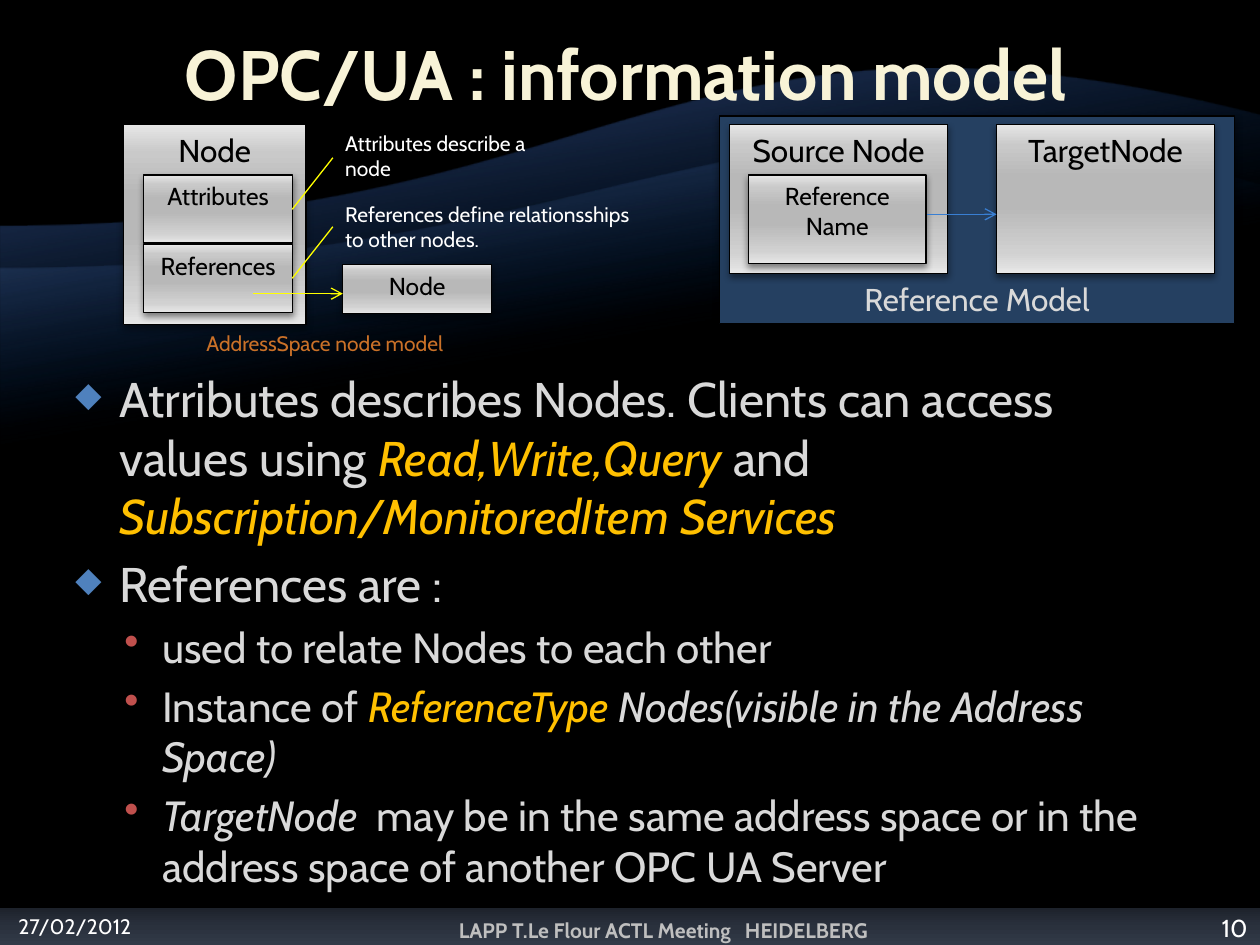
from lxml.etree import SubElement
from pptx import Presentation
from pptx.dml.color import RGBColor
from pptx.enum.shapes import MSO_CONNECTOR, MSO_SHAPE
from pptx.enum.text import MSO_ANCHOR as ANCHOR, PP_ALIGN as ALIGN
from pptx.oxml.ns import qn
from pptx.util import Cm, Pt

FONT = "Cabin"
COLOURS = {
    "black": "000000", "white": "FFFFFF", "grey": "D9D9D9", "footer": "BFBFBF",
    "cream": "F8F3D7", "gold": "FFC000", "orange": "CA7128", "panel": "254061",
    "yellow": "FFFF00", "blue": "397FD3", "diamond": "4F81BD", "dot": "C0504D",
}
COLOURS = {name: RGBColor.from_string(value) for name, value in COLOURS.items()}
STEEL = [(0, "E7E7E7", 100), (14, "D1D1D1", 100), (45, "B8B8B8", 100),
         (65, "B8B8B8", 100), (86, "C9C9C9", 100), (100, "E7E7E7", 100)]


def fill_gradient(shape, stops, angle):
    """Fill with (position, colour, opacity) stops, angle clockwise."""
    shape.fill.gradient()
    shape.fill.gradient_angle = 360 - angle
    stop_list = shape._element.spPr.find(qn("a:gradFill")).find(qn("a:gsLst"))
    for old in list(stop_list):
        stop_list.remove(old)
    for position, colour, opacity in stops:
        stop = SubElement(stop_list, qn("a:gs"), pos=str(position * 1000))
        value = SubElement(stop, qn("a:srgbClr"), val=colour)
        if opacity < 100:
            SubElement(value, qn("a:alpha"), val=str(opacity * 1000))


def write(frame, text, size, colour, align, anchor, bold=False):
    frame.word_wrap = True
    frame.vertical_anchor = anchor
    frame.text = text
    for para in frame.paragraphs:
        para.alignment = align
        for span in para.runs:
            span.font.name = FONT
            span.font.size = Pt(size)
            span.font.bold = bold
            span.font.color.rgb = COLOURS[colour]


deck = Presentation()
deck.slide_width, deck.slide_height = Cm(25.4), Cm(19.05)
page = deck.slides.add_slide(deck.slide_layouts[6])
page.background.fill.solid()
page.background.fill.fore_color.rgb = COLOURS["black"]

# Footer band
band = page.shapes.add_shape(MSO_SHAPE.RECTANGLE, Cm(-0.71), Cm(18.31), Cm(26.8), Cm(0.74))
band.shadow.inherit = False
band.line.fill.background()
fill_gradient(band, [(0, "1D222B", 100), (50, "2A313D", 100), (100, "323A48", 100)], 90)

# Background waves: Bezier control points, bottom edge, bright colour, its opacity
waves = [
    ([(0, 4.57), (12.7, 4.57), (13.56, -0.71), (25.4, 2.34)], 17.78, "7C9FFF", 55),
    ([(0, 5.41), (12.7, 5.41), (15.19, 0.79), (25.4, 3.73)], 16.18, "A5BDFF", 30),
]
STEPS = 60
for controls, bottom, colour, opacity in waves:
    curve = []
    for step in range(STEPS + 1):
        t = step / STEPS
        weights = [(1 - t) ** 3, 3 * t * (1 - t) ** 2, 3 * t ** 2 * (1 - t), t ** 3]
        curve.append(tuple(Cm(sum(w * point[axis] for w, point in zip(weights, controls)))
                           for axis in (0, 1)))
    builder = page.shapes.build_freeform(Cm(0), Cm(bottom))
    builder.add_line_segments(curve + [(Cm(25.4), Cm(bottom))], close=True)
    wave = builder.convert_to_shape()
    wave.shadow.inherit = False
    wave.line.fill.background()
    fill_gradient(wave, [(65, "00469C", 0), (100, colour, opacity)], 260)

# Diagram boxes, back to front: place, text, size
boxes = [
    ((14.5, 2.34, 10.39, 4.19), "Reference Model", 18),
    ((2.49, 2.51, 3.68, 4.04), "Node", 18),
    ((2.9, 3.53, 3, 1.37), "Attributes", 14),
    ((2.9, 4.93, 3, 1.37), "References", 14),
    ((6.91, 5.33, 3, 0.99), "Node", 14),
    ((14.71, 2.51, 4.39, 3), "Source Node", 18),
    ((15.09, 3.53, 3.58, 1.78), "Reference Name", 14),
    ((20.09, 2.51, 4.39, 3), "TargetNode", 18),
]
for place, text, size in boxes:
    box = page.shapes.add_shape(MSO_SHAPE.RECTANGLE, *map(Cm, place))
    box.line.color.rgb = COLOURS["black"]
    box.line.width = Pt(0.75)
    if text == "Reference Model":
        box.fill.solid()
        box.fill.fore_color.rgb = COLOURS["panel"]
        write(box.text_frame, text, size, "grey", ALIGN.CENTER, ANCHOR.BOTTOM)
    else:
        fill_gradient(box, STEEL, 270)
        write(box.text_frame, text, size, "black", ALIGN.CENTER, ANCHOR.TOP)
    box.shadow.inherit = False
    effects = box._element.spPr.find(qn("a:effectLst"))
    shadow = SubElement(effects, qn("a:outerShdw"), blurRad=str(Pt(4)), dist=str(Pt(2)),
                        dir="5400000", rotWithShape="0")
    tint = SubElement(shadow, qn("a:srgbClr"), val="000000")
    SubElement(tint, qn("a:alpha"), val="43000")

# Connectors: ends, colour, arrowhead
connectors = [
    ((5.11, 5.92, 6.91, 5.92), "yellow", True),
    ((5.89, 4.22, 6.71, 3.18), "yellow", False),
    ((5.89, 5.61, 6.71, 4.57), "yellow", False),
    ((18.69, 4.32, 20.09, 4.32), "blue", True),
]
for ends, colour, arrow in connectors:
    link = page.shapes.add_connector(MSO_CONNECTOR.STRAIGHT, *map(Cm, ends))
    link.line.color.rgb = COLOURS[colour]
    link.line.width = Pt(0.75)
    if arrow:
        SubElement(link.line._get_or_add_ln(), qn("a:tailEnd"), type="arrow")
    SubElement(link._element.spPr, qn("a:effectLst"))

# Title, labels and footer: place, text, size, colour, align, anchor, bold, side insets
labels = [
    ((3.51, 0.2, 18.21, 2.13), "OPC/UA : information model", 40, "cream",
     ALIGN.CENTER, ANCHOR.BOTTOM, True, (0, 0)),
    ((6.71, 2.51, 4.32, 1.27), "Attributes describe a node", 12, "white",
     ALIGN.LEFT, ANCHOR.TOP, False, (0.25, 0.25)),
    ((6.71, 3.94, 6.6, 1.27), "References define relationsships\nto other nodes.", 12, "white",
     ALIGN.LEFT, ANCHOR.TOP, False, (0.25, 0.25)),
    ((3.91, 6.53, 6.6, 0.76), "AddressSpace node model", 12, "orange",
     ALIGN.LEFT, ANCHOR.TOP, False, (0.25, 0.25)),
    ((0, 18.03, 3.02, 1.02), "27/02/2012", 12, "white",
     ALIGN.CENTER, ANCHOR.BOTTOM, False, (0.25, 0.25)),
    ((4.5, 18.11, 18.01, 1.02), "LAPP T.Le Flour ACTL Meeting   HEIDELBERG", 12, "footer",
     ALIGN.CENTER, ANCHOR.BOTTOM, True, (0, 0.25)),
    ((24.03, 18.11, 1.47, 1.02), "10", 14, "white",
     ALIGN.CENTER, ANCHOR.BOTTOM, False, (0.25, 0)),
]
for place, text, size, colour, align, anchor, bold, insets in labels:
    frame = page.shapes.add_textbox(*map(Cm, place)).text_frame
    frame.margin_left, frame.margin_right = map(Cm, insets)
    if size == 40:
        frame.margin_top = frame.margin_bottom = Cm(0.03)
    write(frame, text, size, colour, align, anchor, bold)

# Bullet text: level, then spans of (text, colour, italic)
bullets = [
    (0, [("Atrributes describes Nodes. Clients can access values using ", "grey", False),
         ("Read,Write,Query", "gold", True), (" and ", "grey", False),
         ("Subscription/MonitoredItem Services", "gold", True)]),
    (0, [("References are :", "grey", False)]),
    (1, [("used to relate Nodes to each other", "grey", False)]),
    (1, [("Instance of ", "grey", False), ("ReferenceType ", "gold", True),
         ("Nodes(visible in the Address Space)", "grey", True)]),
    (1, [("TargetNode  ", "grey", True),
         ("may be in the same address space or in the address space of another OPC UA Server",
          "grey", False)]),
]
# Per level: symbol, colour, symbol size in %, indent, hanging, text size
levels = [("◆", "diamond", 70, 0.89, 0.89, 27.8), ("•", "dot", 100, 1.75, 0.76, 24.1)]
body = page.shapes.add_textbox(Cm(1.27), Cm(7.32), Cm(22.86), Cm(10.16)).text_frame
body.word_wrap = True
for index, (level, spans) in enumerate(bullets):
    symbol, tint, scale, indent, hanging, size = levels[level]
    para = body.add_paragraph() if index else body.paragraphs[0]
    para.level = level
    if index:
        para.space_before = Pt(round(size * 0.2, 1))
    props = para._p.get_or_add_pPr()
    props.set("marL", str(Cm(indent)))
    props.set("indent", str(-Cm(hanging)))
    bullet_colour = SubElement(props, qn("a:buClr"))
    SubElement(bullet_colour, qn("a:srgbClr"), val=str(COLOURS[tint]))
    SubElement(props, qn("a:buSzPct"), val=str(scale * 1000))
    SubElement(props, qn("a:buChar"), char=symbol)
    for text, colour, italic in spans:
        span = para.add_run()
        span.text = text
        span.font.name = FONT
        span.font.size = Pt(size)
        span.font.italic = italic
        span.font.color.rgb = COLOURS[colour]

deck.save("out.pptx")
